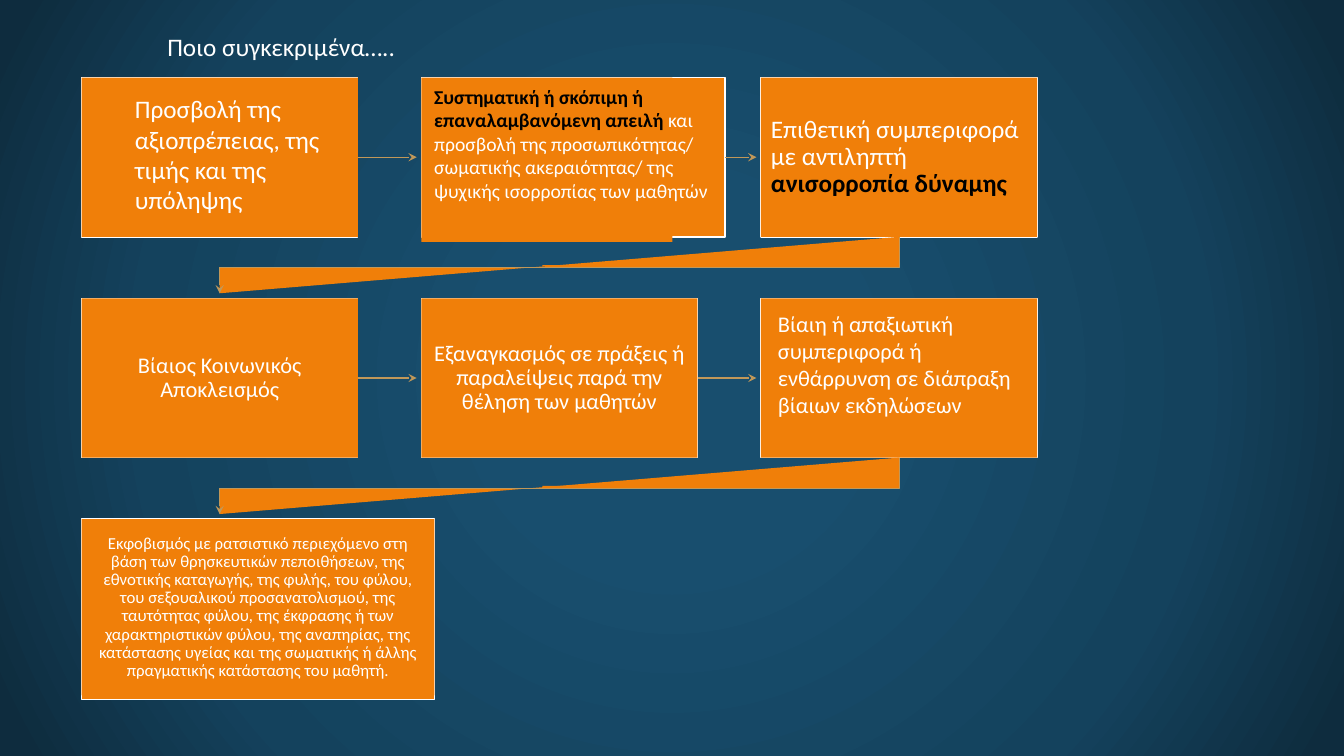
"""Build the slide of seven linked boxes that define school bullying."""
from lxml.etree import SubElement
from pptx import Presentation
from pptx.dml.color import RGBColor
from pptx.enum.shapes import MSO_CONNECTOR, MSO_SHAPE
from pptx.enum.text import MSO_ANCHOR, PP_ALIGN
from pptx.oxml import parse_xml
from pptx.oxml.ns import nsdecls, qn
from pptx.util import Pt

ORANGE, GOLD, WHITE, BLACK = "F07F09", "C19859", "FFFFFF", "000000"
WIDE, HIGH = 197.3, 113.8
LEFT, TOP = 58.3, 55.4
COL, ROW = 242.65, 157.7


def paint(fill, shade):
    fill.solid()
    fill.fore_color.rgb = RGBColor.from_string(shade)


def write(shape, paras, size=18, align=PP_ALIGN.LEFT, space=1.0,
          anchor=MSO_ANCHOR.TOP, side=7.2, edge=3.6):
    frame = shape.text_frame
    frame.word_wrap = True
    frame.vertical_anchor = anchor
    frame.margin_left = frame.margin_right = Pt(side)
    frame.margin_top = frame.margin_bottom = Pt(edge)
    for num, runs in enumerate(paras):
        para = frame.add_paragraph() if num else frame.paragraphs[0]
        para.alignment = align
        para.line_spacing = space
        para.space_before = para.space_after = Pt(0)
        for words, bold in runs:
            run = para.add_run()
            run.text = words
            run.font.name = "Calibri"
            run.font.size = Pt(size)
            run.font.bold = bold
            paint(run.font.fill, BLACK if bold else WHITE)


deck = Presentation()
deck.slide_width, deck.slide_height = Pt(960), Pt(540)
slide = deck.slides.add_slide(deck.slide_layouts[5])
shapes = slide.shapes

slide.background.fill.solid()
back = slide.element.find(".//" + qn("p:bgPr"))
stops = "".join(
    f'<a:gs pos="{pos}000"><a:srgbClr val="{shade}"/></a:gs>'
    for pos, shade in [(0, "184E6E"), (23, "184E6E"), (69, "14425D"), (97, "0E2C3E")])
back.replace(back[0], parse_xml(
    f'<a:gradFill {nsdecls("a")} rotWithShape="1"><a:gsLst>{stops}</a:gsLst>'
    '<a:path path="circle"><a:fillToRect l="50000" t="50000" r="50000" b="50000"/>'
    '</a:path></a:gradFill>'))

title = shapes.title
title.left, title.top, title.width, title.height = Pt(112.3), Pt(18.7), Pt(568.8), Pt(28.8)
write(title, [[("Ποιο συγκεκριμένα…..", False)]])

power = [[("Επιθετική συμπεριφορά με αντιληπτή ", False), ("ανισορροπία δύναμης", True)]]
apart = [[("Βίαιος Κοινωνικός Αποκλεισμός", False)]]
force = [[("Εξαναγκασμός σε πράξεις ή παραλείψεις παρά την θέληση των μαθητών", False)]]
race = [[(words, False)] for words in (
    "Εκφοβισμός με ρατσιστικό περιεχόμενο στη βάση των θρησκευτικών πεποιθήσεων, της",
    "εθνοτικής καταγωγής, της φυλής, του φύλου, του σεξουαλικού προσανατολισμού, της",
    "ταυτότητας φύλου, της έκφρασης ή των χαρακτηριστικών φύλου, της αναπηρίας, της",
    "κατάστασης υγείας και της σωματικής ή άλλης πραγματικής κατάστασης του μαθητή.")]

plain = (WIDE, HIGH)
mid = PP_ALIGN.CENTER
cells = [
    (0, 0, plain, plain, [], 18, mid),
    (1, 0, (216.9, HIGH), (179.3, 117.4), [], 14, mid),
    (2, 0, plain, plain, power, 18, PP_ALIGN.LEFT),
    (0, 1, plain, plain, apart, 16, mid),
    (1, 1, plain, plain, force, 16, mid),
    (2, 1, plain, plain, [], 16, mid),
    (0, 2, (252, 128.9), (252, 126), race, 12, mid),
]
lines = []
for col, row, outer, inner, paras, size, align in cells:
    x, y = LEFT + col * COL, TOP + row * ROW
    pair = []
    for wide, high in (outer, inner):
        box = shapes.add_shape(MSO_SHAPE.RECTANGLE, Pt(x), Pt(y), Pt(wide), Pt(high))
        box.shadow.inherit = False
        paint(box.fill, ORANGE)
        pair.append(box)
    frame, cover = pair
    paint(frame.line.fill, WHITE)
    frame.line.width = Pt(1)
    cover.line.fill.background()
    if paras:
        write(cover, paras, size, align, 0.9, MSO_ANCHOR.MIDDLE, 7.2, 7.9)
    if col < 2 and row < 2:
        level = Pt(y + HIGH / 2)
        link = shapes.add_connector(MSO_CONNECTOR.STRAIGHT, Pt(x + outer[0]), level,
                                    Pt(x + COL - 3.3), level)
        link.begin_connect(frame, 3)
        lines.append(link)

for row in range(2):
    start, end = LEFT + 2 * COL + WIDE / 2, LEFT + WIDE / 2
    base = TOP + row * ROW + HIGH
    path = shapes.build_freeform(Pt(start), Pt(base))
    path.add_line_segments([(Pt(start), Pt(base + 21.9)), (Pt(end), Pt(base + 21.9)),
                            (Pt(end), Pt(base + 40.3))], close=False)
    flow = path.convert_to_shape()
    flow.shadow.inherit = False
    paint(flow.fill, ORANGE)
    lines.append(flow)
    strip = shapes.add_shape(MSO_SHAPE.RECTANGLE, Pt(387.4), Pt(base + 20.2),
                             Pt(24.5), Pt(0.7))
    strip.shadow.inherit = False
    paint(strip.fill, ORANGE)
    strip.line.fill.background()

for item in lines:
    paint(item.line.fill, GOLD)
    item.line.width = Pt(0.75)
    props = item.element.spPr
    SubElement(props.find(qn("a:ln")), qn("a:tailEnd"), type="stealth")
    if props.find(qn("a:effectLst")) is None:
        SubElement(props, qn("a:effectLst"))

notes = [
    (89.3, 63.4, 152.6, 94.3, 18,
     [[("Προσβολή της αξιοπρέπειας, της τιμής και της υπόληψης", False)]]),
    (303.1, 56.9, 211, 108.7, 14,
     [[("Συστηματική ή σκόπιμη ή επαναλαμβανόμενη απειλή", True),
       (" και προσβολή της προσωπικότητας/", False)],
      [("σωματικής ακεραιότητας/ της ψυχικής ισορροπίας των μαθητών", False)]]),
    (548.6, 218.2, 187.9, 85, 16,
     [[("Βίαιη ή απαξιωτική συμπεριφορά ή ενθάρρυνση σε διάπραξη βίαιων εκδηλώσεων",
        False)]]),
]
for x, y, wide, high, size, paras in notes:
    write(shapes.add_textbox(Pt(x), Pt(y), Pt(wide), Pt(high)), paras, size)

deck.save("out.pptx")
